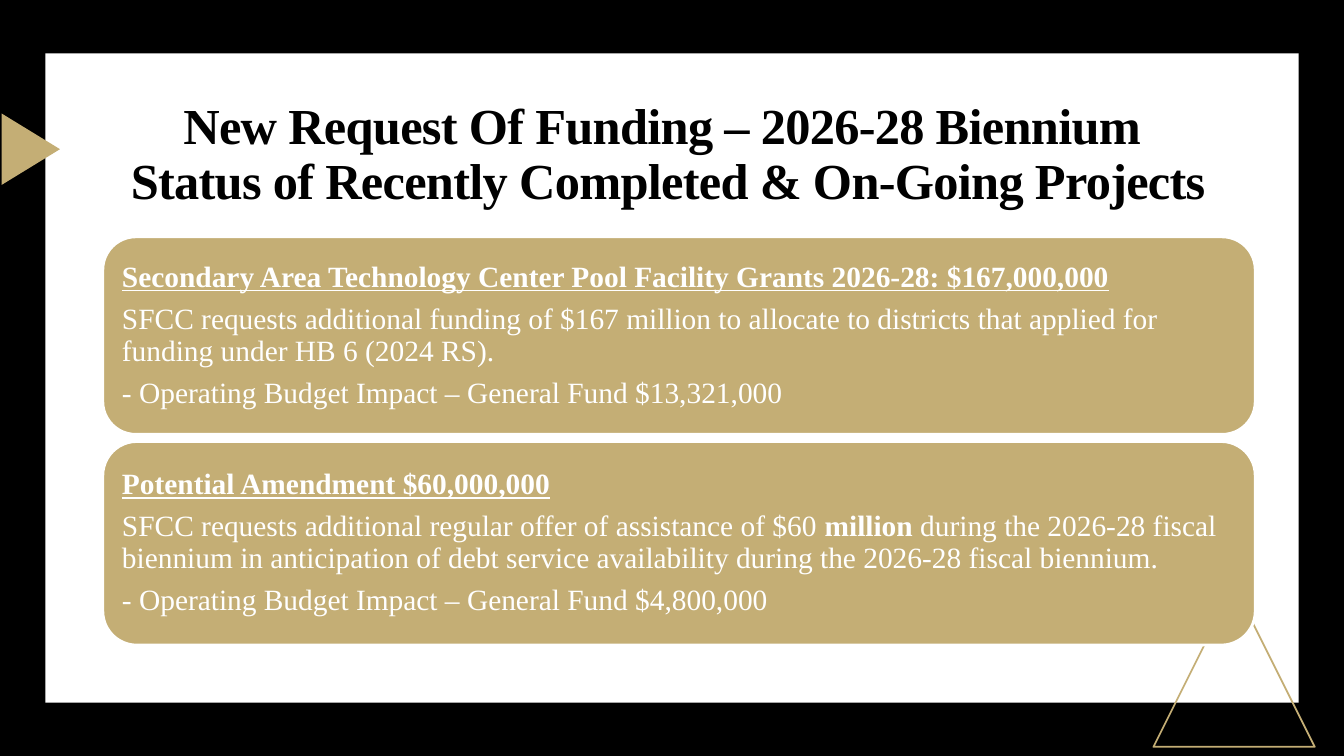
from pptx import Presentation
from pptx.dml.color import RGBColor
from pptx.enum.shapes import MSO_SHAPE as Shape
from pptx.enum.text import MSO_ANCHOR as Anchor, PP_ALIGN as Align
from pptx.util import Inches, Pt

BLACK = RGBColor(0x00, 0x00, 0x00)
WHITE = RGBColor(0xFF, 0xFF, 0xFF)
GOLD = RGBColor(0xC4, 0xAE, 0x75)


class FundingSlide:
    """Draws the elements of a funding slide in one shared style."""

    font_name = "Times New Roman"
    title_size = Pt(36)
    body_size = Pt(21)
    line_spacing = 0.9
    paragraph_gap = Pt(7.35)

    def __init__(self, presentation):
        self.slide = presentation.slides.add_slide(presentation.slide_layouts[6])
        background = self.slide.background.fill
        background.solid()
        background.fore_color.rgb = BLACK

    def shape(self, kind, box, fill=None, line=None, width=1, rotation=0):
        shape = self.slide.shapes.add_shape(kind, *map(Inches, box))
        shape.shadow.inherit = False
        shape.rotation = rotation
        if fill is None:
            shape.fill.background()
        else:
            shape.fill.solid()
            shape.fill.fore_color.rgb = fill
        if line is None:
            shape.line.fill.background()
        else:
            shape.line.color.rgb = line
            shape.line.width = Pt(width)

    def frame(self, box, inset):
        frame = self.slide.shapes.add_textbox(*map(Inches, box)).text_frame
        frame.word_wrap = True
        frame.vertical_anchor = Anchor.MIDDLE
        frame.margin_left = frame.margin_right = Inches(inset)
        frame.margin_top = frame.margin_bottom = Inches(inset)
        return frame

    def style(self, paragraph, size, color, bold=False):
        paragraph.line_spacing = self.line_spacing
        font = paragraph.font
        font.name, font.size, font.bold = self.font_name, size, bold
        font.color.rgb = color

    def title(self, box, text):
        paragraph = self.frame(box, 0.05).paragraphs[0]
        paragraph.text = text
        paragraph.alignment = Align.CENTER
        self.style(paragraph, self.title_size, BLACK, bold=True)
        for run in paragraph.runs:
            run._r.get_or_add_rPr().set("spc", "-50")

    def card(self, top, height, heading, request, impact):
        self.shape(Shape.ROUNDED_RECTANGLE, (1.02, top, 11.43, height), GOLD, WHITE, 2)
        frame = self.frame((1.12, top + 0.1, 11.24, height - 0.2), 0.09)
        for index, parts in enumerate(([heading], request, [impact])):
            paragraph = frame.paragraphs[0] if index == 0 else frame.add_paragraph()
            self.style(paragraph, self.body_size, WHITE, bold=index == 0)
            paragraph.font.underline = index == 0
            paragraph.space_after = self.paragraph_gap
            for position, part in enumerate(parts):
                run = paragraph.add_run()
                run.text = part
                if position % 2:
                    run.font.bold = True


def main():
    presentation = Presentation()
    presentation.slide_width = Inches(13.33)
    presentation.slide_height = Inches(7.5)

    page = FundingSlide(presentation)
    page.shape(Shape.RECTANGLE, (0.45, 0.53, 12.43, 6.44), WHITE)
    page.shape(Shape.ISOSCELES_TRIANGLE, (11.44, 5.81, 1.6, 1.6), line=GOLD, width=1.25)
    page.shape(Shape.ISOSCELES_TRIANGLE, (-0.05, 1.19, 0.71, 0.58), GOLD, rotation=90)
    page.title(
        (1.02, 1.2, 11.21, 0.69),
        "New Request Of Funding – 2026-28 Biennium \v"
        "Status of Recently Completed & On-Going Projects",
    )
    page.card(
        2.35, 1.96,
        "Secondary Area Technology Center Pool Facility Grants 2026-28: $167,000,000",
        ["SFCC requests additional funding of $167 million to allocate to districts "
         "that applied for funding under HB 6 (2024 RS)."],
        "- Operating Budget Impact – General Fund $13,321,000",
    )
    page.card(
        4.38, 2.02,
        "Potential Amendment $60,000,000",
        ["SFCC requests additional regular offer of assistance of $60",
         " million ",
         "during the 2026-28 fiscal biennium in anticipation of debt service "
         "availability during the 2026-28 fiscal biennium."],
        "- Operating Budget Impact – General Fund $4,800,000",
    )
    presentation.save("out.pptx")


if __name__ == "__main__":
    main()
